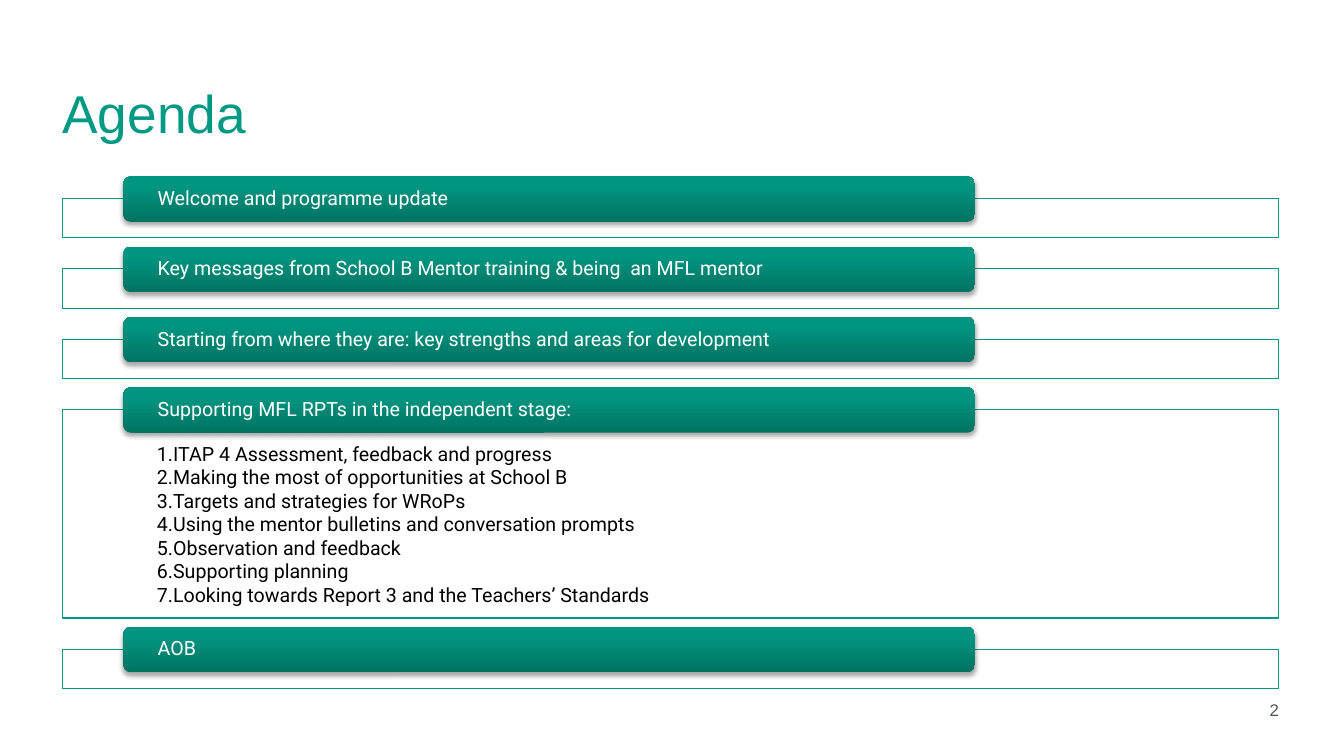
import dataclasses

import pptx
import pptx.dml.color
import pptx.enum.shapes
import pptx.enum.text
import pptx.oxml
import pptx.oxml.ns
import pptx.util

Pt = pptx.util.Pt
ALIGN = pptx.enum.text.PP_ALIGN
ANCHOR = pptx.enum.text.MSO_ANCHOR
SHAPE = pptx.enum.shapes.MSO_SHAPE


@dataclasses.dataclass(frozen=True)
class Theme:
    """Colours, fonts and type sizes of the slide."""
    accent: str = "009A84"
    bar_stops: tuple = ((0, "007362"), (80, "009580"), (100, "009680"))
    shadow: str = "000000"
    paper: str = "FFFFFF"
    ink: str = "000000"
    grey: str = "50535A"
    heading_font: str = "Arial"
    body_font: str = "Roboto"
    title_size: int = 38
    body_size: int = 14
    number_size: int = 12


THEME = Theme()
AGENDA = [
    ("Welcome and programme update", []),
    ("Key messages from School B Mentor training & being  an MFL mentor", []),
    ("Starting from where they are: key strengths and areas for development", []),
    ("Supporting MFL RPTs in the independent stage:", [
        "ITAP 4 Assessment, feedback and progress",
        "Making the most of opportunities at School B",
        "Targets and strategies for WRoPs",
        "Using the mentor bulletins and conversation prompts",
        "Observation and feedback",
        "Supporting planning",
        "Looking towards Report 3 and the Teachers’ Standards",
    ]),
    ("AOB", []),
]


def rgb(code):
    """Return a colour object for a hex code."""
    return pptx.dml.color.RGBColor.from_string(code)


def xml(tag, inner="", attributes=""):
    """Build one drawing element from its tag, content and attributes."""
    space = pptx.oxml.ns.nsdecls("a")
    return pptx.oxml.parse_xml(f"<a:{tag} {space} {attributes}>{inner}</a:{tag}>")


def set_frame(shape, margins, anchor, wrap=True):
    """Set the margins, anchor and wrapping of a shape's text."""
    frame = shape.text_frame
    frame.margin_left, frame.margin_top, frame.margin_right, frame.margin_bottom = map(Pt, margins)
    frame.vertical_anchor = anchor
    frame.word_wrap = wrap
    return frame


def add_span(para, text, font, size, colour, align=ALIGN.LEFT):
    """Add one styled run to a paragraph."""
    para.alignment = align
    span = para.add_run()
    span.text = text
    span.font.name = font
    span.font.size = Pt(size)
    span.font.color.rgb = rgb(colour)


def add_title(page, left, top, width, height):
    """Place the slide title at the bottom of its box."""
    box = page.shapes.add_textbox(Pt(left), Pt(top), Pt(width), Pt(height))
    frame = set_frame(box, (0, 0, 0, 0), ANCHOR.BOTTOM, False)
    add_span(frame.paragraphs[0], "Agenda", THEME.heading_font, THEME.title_size, THEME.accent)


def add_page_number(page, left, top, width, height):
    """Place the page number against the right edge of its box."""
    box = page.shapes.add_textbox(Pt(left), Pt(top), Pt(width), Pt(height))
    frame = set_frame(box, (0, 0, 0, 0), ANCHOR.TOP)
    add_span(frame.paragraphs[0], "2", THEME.heading_font, THEME.number_size, THEME.grey, ALIGN.RIGHT)


def add_outline(page, left, top, width, height, points):
    """Draw a section outline with its numbered points."""
    box = page.shapes.add_shape(SHAPE.RECTANGLE, Pt(left), Pt(top), Pt(width), Pt(height))
    box.shadow.inherit = False
    box.fill.solid()
    box.fill.fore_color.rgb = rgb(THEME.paper)
    box.line.color.rgb = rgb(THEME.accent)
    box.line.width = Pt(0.75)
    if not points:
        return
    frame = set_frame(box, (67.5, 23, 67.5, 8), ANCHOR.TOP)
    for index, point in enumerate(points):
        para = frame.add_paragraph() if index else frame.paragraphs[0]
        properties = para._p.get_or_add_pPr()
        properties.set("marL", str(Pt(9)))
        properties.set("indent", str(-Pt(9)))
        properties.append(xml("buFont", attributes=f'typeface="{THEME.body_font}"'))
        properties.append(xml("buAutoNum", attributes='type="arabicPeriod"'))
        add_span(para, point, THEME.body_font, THEME.body_size, THEME.ink)


def add_bar(page, left, top, width, height, heading):
    """Draw a shaded heading bar with a soft shadow below it."""
    bar = page.shapes.add_shape(SHAPE.ROUNDED_RECTANGLE, Pt(left), Pt(top), Pt(width), Pt(height))
    bar.shadow.inherit = False
    bar.line.fill.background()
    bar.fill.gradient()
    bar.fill.gradient_angle = 90
    properties = bar._element.spPr
    stops = properties.find(".//" + pptx.oxml.ns.qn("a:gsLst"))
    for stop in list(stops):
        stops.remove(stop)
    for place, colour in THEME.bar_stops:
        stops.append(xml("gs", f'<a:srgbClr val="{colour}"/>', f'pos="{place * 1000}"'))
    effects = properties.find(pptx.oxml.ns.qn("a:effectLst"))
    effects.append(xml(
        "outerShdw",
        f'<a:srgbClr val="{THEME.shadow}"><a:alpha val="35000"/></a:srgbClr>',
        f'blurRad="{Pt(3.1)}" dist="{Pt(1.8)}" dir="5400000" rotWithShape="0"',
    ))
    frame = set_frame(bar, (23, 0, 23, 0), ANCHOR.MIDDLE)
    para = frame.paragraphs[0]
    para.line_spacing = 0.9
    add_span(para, heading, THEME.body_font, THEME.body_size, THEME.paper)


def add_agenda(page, left, top, width):
    """Stack the agenda sections down from the top of the given area."""
    bar_rise, bar_height, gap = 15.9, 32.5, 22.2
    outline_top = top + bar_rise
    for heading, points in AGENDA:
        height = 149 if points else 28
        add_outline(page, left, outline_top, width, height, points)
        add_bar(page, left + width * 0.05, outline_top - bar_rise, width * 0.7, bar_height, heading)
        outline_top += height + gap


def main():
    """Build the agenda slide and save the deck."""
    deck = pptx.Presentation()
    deck.slide_width, deck.slide_height = Pt(960), Pt(540)
    page = deck.slides.add_slide(deck.slide_layouts[6])
    left, width = 44.6, 869
    add_page_number(page, left + width - 71, 500, 71, 20)
    add_title(page, left, 37.5, width, 65.5)
    add_agenda(page, left, 126, width)
    deck.save("out.pptx")


if __name__ == "__main__":
    main()
